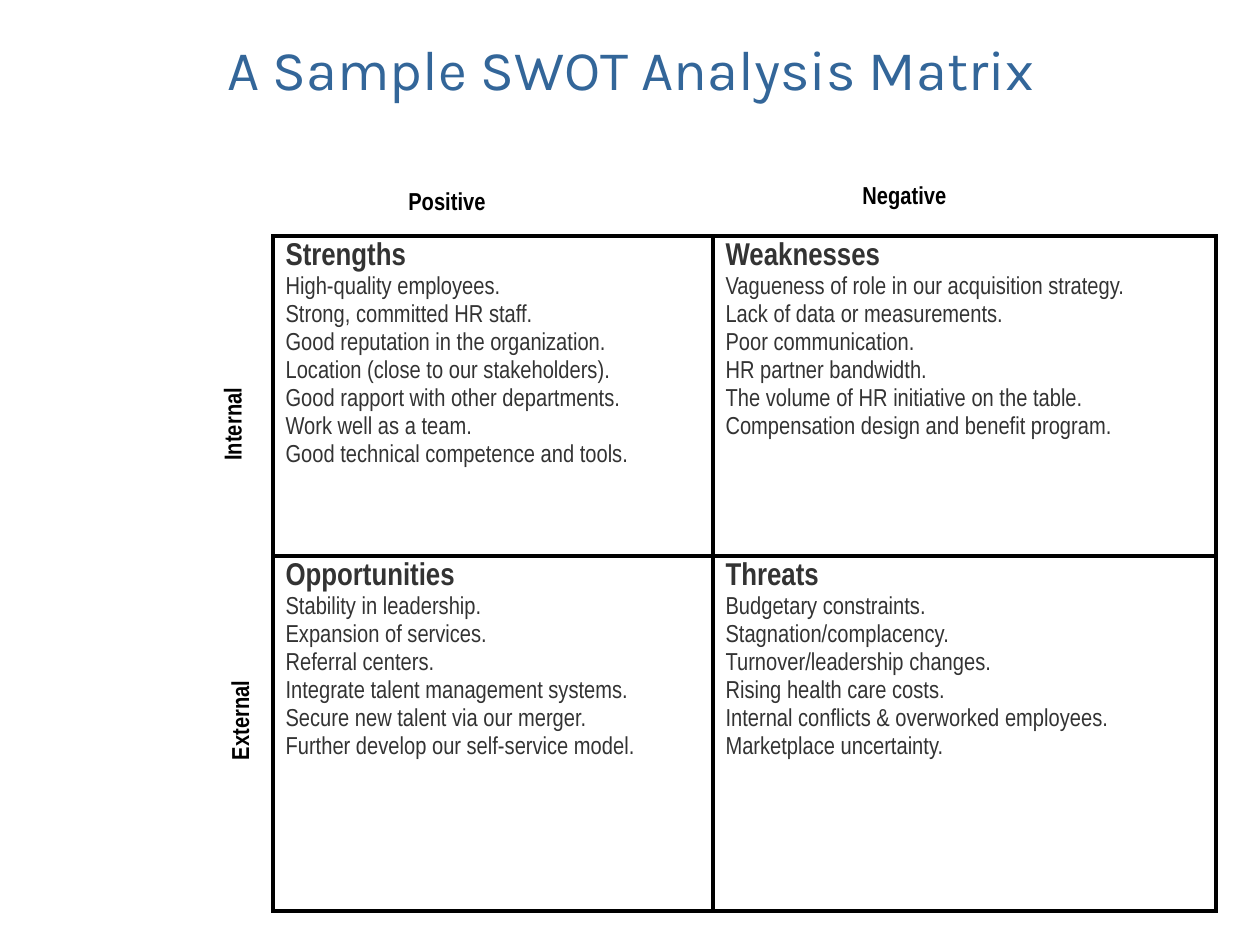
from lxml import etree
from pptx import Presentation
from pptx.dml.color import RGBColor
from pptx.enum.text import MSO_ANCHOR, MSO_AUTO_SIZE
from pptx.oxml.ns import qn
from pptx.util import Emu, Pt

BOTTOM = MSO_ANCHOR.BOTTOM
FIT_SHAPE = MSO_AUTO_SIZE.SHAPE_TO_FIT_TEXT

PX_PER_INCH = 126
BODY_FONT = "Arial Narrow"
TITLE_FONT = "Karla"
BLACK, GREY, BLUE = "000000", "333333", "336699"

COLUMN_WIDTHS = (440, 503)
ROW_HEIGHTS = (320, 355)
QUADRANTS = (
    (
        ("Strengths", "High-quality employees.", "Strong, committed HR staff.",
         "Good reputation in the organization.",
         "Location (close to our stakeholders).",
         "Good rapport with other departments.", "Work well as a team.",
         "Good technical competence and tools."),
        ("Weaknesses", "Vagueness of role in our acquisition strategy.",
         "Lack of data or measurements.", "Poor communication.",
         "HR partner bandwidth.", "The volume of HR initiative on the table.",
         "Compensation design and benefit program."),
    ),
    (
        ("Opportunities", "Stability in leadership.", "Expansion of services.",
         "Referral centers.", "Integrate talent management systems.",
         "Secure new talent via our merger.",
         "Further develop our self-service model."),
        ("Threats", "Budgetary constraints.", "Stagnation/complacency.",
         "Turnover/leadership changes.", "Rising health care costs.",
         "Internal conflicts & overworked employees.",
         "Marketplace uncertainty."),
    ),
)
# Text, box in px, rotation in degrees
AXIS_LABELS = (
    ("Positive", (396, 180, 103, 43), 0),
    ("Negative", (850, 174, 110, 43), 0),
    ("Internal", (183, 402, 99, 43), 270),
    ("External", (187, 698, 106, 43), 270),
)


def px(length):
    return Emu(round(length * 914400 / PX_PER_INCH))


def color(hex_string):
    return RGBColor.from_string(hex_string)


def style(paragraph, name, size, hex_color, bold=False):
    font = paragraph.font
    font.name = name
    font.size = Pt(size)
    font.bold = bold
    font.color.rgb = color(hex_color)


def add_title(slide, text, box):
    shape = slide.shapes.add_textbox(*map(px, box))
    frame = shape.text_frame
    frame.word_wrap = True
    frame.vertical_anchor = BOTTOM
    frame.text = text
    style(frame.paragraphs[0], TITLE_FONT, 32, BLUE)


def add_axis_label(slide, text, box, rotation):
    shape = slide.shapes.add_textbox(*map(px, box))
    shape.rotation = rotation
    frame = shape.text_frame
    frame.word_wrap = False
    frame.auto_size = FIT_SHAPE
    frame.text = text
    style(frame.paragraphs[0], BODY_FONT, 14, BLACK, bold=True)


def add_borders(cell, width, hex_color):
    properties = cell._tc.get_or_add_tcPr()
    for side in ("lnL", "lnR", "lnT", "lnB"):
        line = etree.SubElement(properties, qn(f"a:{side}"), w=str(Pt(width)))
        fill = etree.SubElement(line, qn("a:solidFill"))
        etree.SubElement(fill, qn("a:srgbClr"), val=hex_color)


def fill_quadrant(cell, lines):
    """Write a heading followed by its points in one bordered cell."""
    add_borders(cell, 2.25, BLACK)
    cell.fill.background()
    cell.text = "\n".join(lines)
    heading, *points = cell.text_frame.paragraphs
    style(heading, BODY_FONT, 18, GREY, bold=True)
    for point in points:
        style(point, BODY_FONT, 14, GREY)
        point.space_before = Pt(2.8)


def add_matrix(slide, left, top):
    table = slide.shapes.add_table(
        len(ROW_HEIGHTS), len(COLUMN_WIDTHS), px(left), px(top),
        px(sum(COLUMN_WIDTHS)), px(sum(ROW_HEIGHTS))).table
    table.first_row = False
    table.horz_banding = False
    for column, width in zip(table.columns, COLUMN_WIDTHS):
        column.width = px(width)
    for row, height, quadrants in zip(table.rows, ROW_HEIGHTS, QUADRANTS):
        row.height = px(height)
        for cell, lines in zip(row.cells, quadrants):
            fill_quadrant(cell, lines)


def main():
    presentation = Presentation()
    presentation.slide_width = px(1260)
    presentation.slide_height = px(945)
    slide = presentation.slides.add_slide(presentation.slide_layouts[6])
    add_title(slide, "A Sample SWOT Analysis Matrix", (215, 28, 945, 80))
    add_matrix(slide, 273, 236)
    for text, box, rotation in AXIS_LABELS:
        add_axis_label(slide, text, box, rotation)
    presentation.save("out.pptx")


if __name__ == "__main__":
    main()
